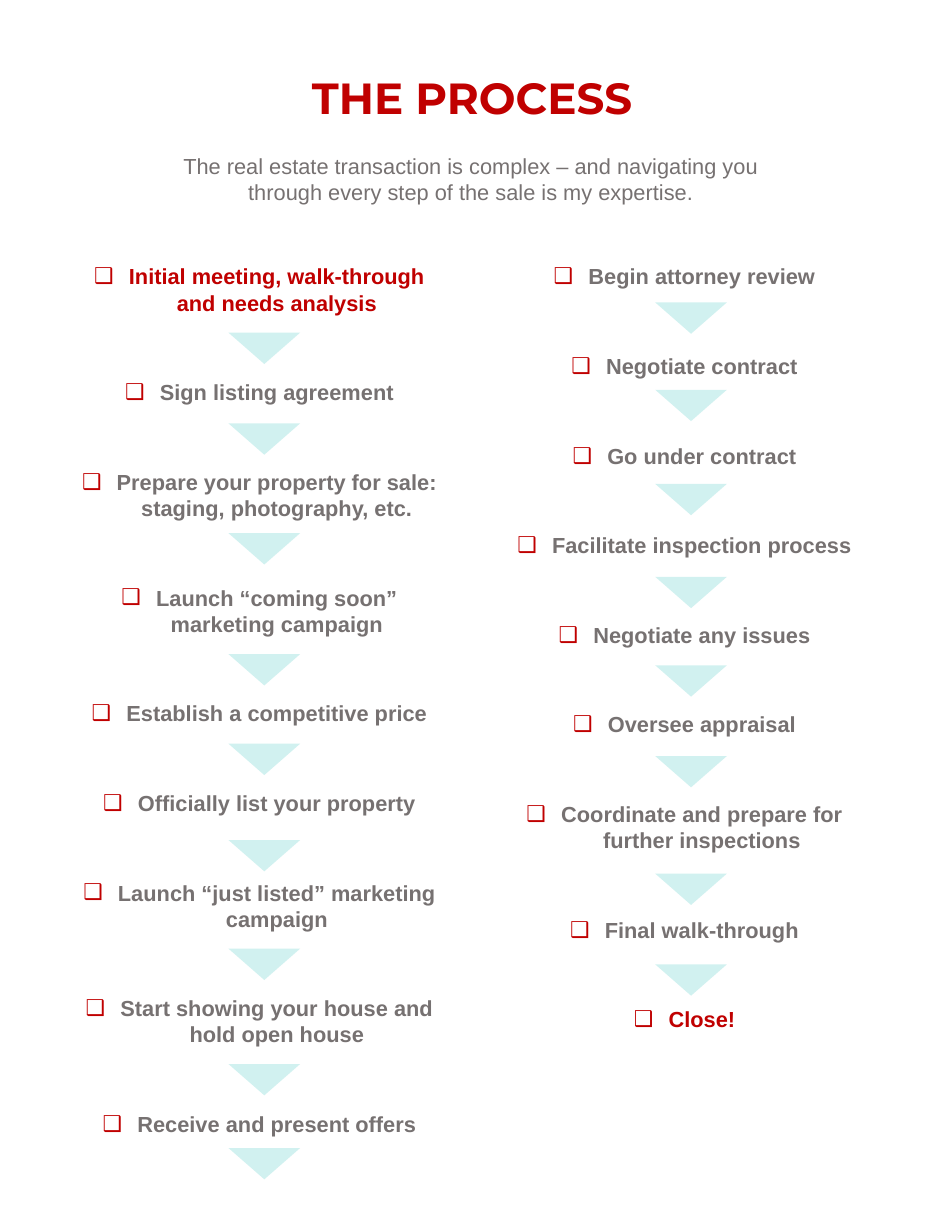
"""Build a one-page checklist of the steps in selling a home."""
from lxml import etree
from pptx import Presentation
from pptx import util as u
from pptx.dml import color
from pptx.enum import shapes, text
from pptx.oxml import ns

COLORS = {"red": "C00000", "gray": "767171", "teal": "1CBBB4", "white": "FFFFFF"}
STEPS = [
    "Initial meeting, walk-through and needs analysis",
    "Sign listing agreement",
    "Prepare your property for sale: staging, photography, etc.",
    "Launch “coming soon” marketing campaign",
    "Establish a competitive price",
    "Officially list your property",
    "Launch “just listed” marketing campaign",
    "Start showing your house and hold open house",
    "Receive and present offers",
    "Begin attorney review",
    "Negotiate contract",
    "Go under contract",
    "Facilitate inspection process",
    "Negotiate any issues",
    "Oversee appraisal",
    "Coordinate and prepare for further inspections",
    "Final walk-through",
    "Close!",
]
ARROW_ROWS = {
    20.4: [29.7, 37.8, 47.6, 58.4, 66.4, 75, 84.7, 95, 102.5],
    58.5: [27, 34.8, 43.2, 51.5, 59.4, 67.5, 78, 86.1],
}

deck = Presentation()
deck.slide_width, deck.slide_height = u.Inches(8.5), u.Inches(11)
COL, ROW = deck.slide_width / 85, deck.slide_height / 110
page = deck.slides.add_slide(deck.slide_layouts[1])
title, checklist = page.placeholders


def style(para, font, size, tint, bold=False):
    para.alignment = text.PP_ALIGN.CENTER
    for span in para.runs:
        span.font.name, span.font.size, span.font.bold = font, u.Pt(size), bold
        span.font.color.rgb = color.RGBColor.from_string(COLORS[tint])


def add_filled(kind, frame, tint, opacity):
    shape = page.shapes.add_shape(kind, *frame)
    shape.shadow.inherit = False
    shape.line.fill.background()
    shape.fill.solid()
    shape.fill.fore_color.rgb = color.RGBColor.from_string(COLORS[tint])
    swatch = shape.fill._xPr.find(".//" + ns.qn("a:srgbClr"))
    etree.SubElement(swatch, ns.qn("a:alpha"), val=str(opacity * 1000))
    return shape


checklist.left, checklist.top = int(6.2 * COL), int(23 * ROW)
checklist.width, checklist.height = int(71.9 * COL), int(85 * ROW)
frame = checklist.text_frame
frame.text = "\n".join(STEPS)
frame.auto_size = text.MSO_AUTO_SIZE.NONE
frame._txBody.bodyPr.set("numCol", "2")
frame._txBody.bodyPr.set("spcCol", str(int(6 * COL)))
for para in frame.paragraphs:
    style(para, "Arial", 14, "red" if para.text in (STEPS[0], STEPS[-1]) else "gray", True)
    para.space_before, para.space_after = u.Pt(0), u.Pt(40.8)
    props = para._p.get_or_add_pPr()
    props.set("marL", str(int(3.1 * COL)))
    props.set("indent", str(int(-3.1 * COL)))
    bullet_color = etree.SubElement(props, ns.qn("a:buClr"))
    etree.SubElement(bullet_color, ns.qn("a:srgbClr"), val=COLORS["red"])
    etree.SubElement(props, ns.qn("a:buChar"), char="❑")

title.left, title.top = int(6.8 * COL), int(5.8 * ROW)
title.width, title.height = int(70.7 * COL), int(5.7 * ROW)
title.text_frame.text = "THE PROCESS"
title.text_frame.auto_size = text.MSO_AUTO_SIZE.NONE
style(title.text_frame.paragraphs[0], "Montserrat", 28, "red", True)

intro_frame = [int(15 * COL), int(13.1 * ROW), int(54.1 * COL), int(5.7 * ROW)]
intro = add_filled(shapes.MSO_SHAPE.RECTANGLE, intro_frame, "white", 70)
intro.text_frame.text = (
    "The real estate transaction is complex – and navigating you "
    "through every step of the sale is my expertise."
)
intro.text_frame.word_wrap = True
style(intro.text_frame.paragraphs[0], "Arial", 14, "gray")

for left, tops in ARROW_ROWS.items():
    for top in tops:
        arrow_frame = [int(left * COL), int(top * ROW), int(6.4 * COL), int(2.8 * ROW)]
        arrow = add_filled(shapes.MSO_SHAPE.ISOSCELES_TRIANGLE, arrow_frame, "teal", 20)
        arrow.rotation = 180

deck.save("out.pptx")
